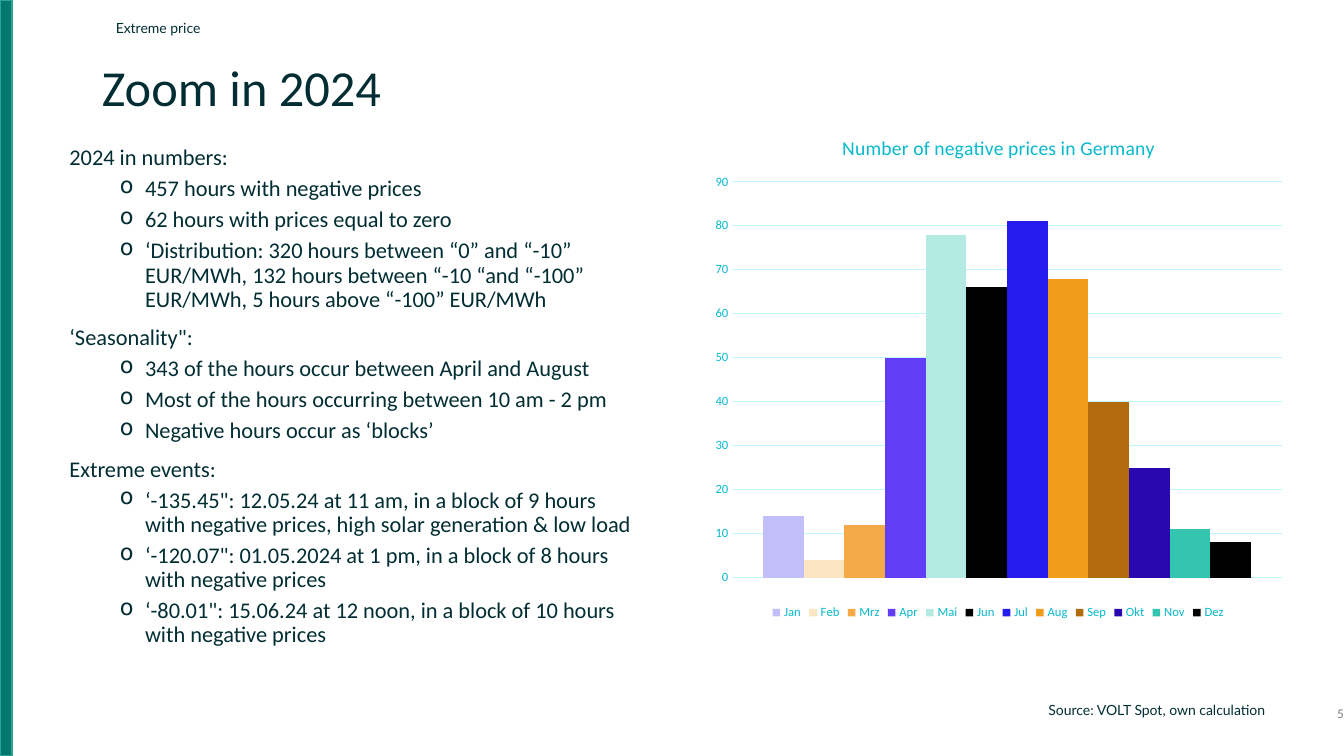
from lxml import etree
from pptx import Presentation
from pptx.chart.data import CategoryChartData
from pptx.dml.color import RGBColor
from pptx.enum.chart import XL_CHART_TYPE, XL_LEGEND_POSITION, XL_TICK_MARK
from pptx.enum.shapes import MSO_SHAPE
from pptx.enum.text import MSO_ANCHOR, MSO_AUTO_SIZE, PP_ALIGN
from pptx.oxml import parse_xml
from pptx.oxml.ns import nsdecls, qn
from pptx.util import Inches, Pt

COLUMNS = XL_CHART_TYPE.COLUMN_CLUSTERED
LEGEND_BOTTOM = XL_LEGEND_POSITION.BOTTOM
NO_TICK = XL_TICK_MARK.NONE
RECTANGLE = MSO_SHAPE.RECTANGLE
TOP, BOTTOM = MSO_ANCHOR.TOP, MSO_ANCHOR.BOTTOM
LEFT, RIGHT = PP_ALIGN.LEFT, PP_ALIGN.RIGHT

INK = RGBColor(0x02, 0x2E, 0x33)
GREY = RGBColor(0x80, 0x80, 0x80)
GREEN = RGBColor(0x01, 0x79, 0x6F)
GREEN_EDGE = RGBColor(0x2B, 0xA4, 0x93)
CYAN = RGBColor(0x08, 0xB9, 0xCD)
GRID = RGBColor(0xBD, 0xF6, 0xFC)

MONTHS = [
    ("Jan", 14, RGBColor(0xC1, 0xBE, 0xFA)),
    ("Feb", 4, RGBColor(0xFB, 0xE5, 0xC3)),
    ("Mrz", 12, RGBColor(0xF3, 0xAA, 0x47)),
    ("Apr", 50, RGBColor(0x61, 0x3E, 0xF5)),
    ("Mai", 78, RGBColor(0xB3, 0xEB, 0xE3)),
    ("Jun", 66, RGBColor(0x00, 0x00, 0x00)),
    ("Jul", 81, RGBColor(0x25, 0x1B, 0xED)),
    ("Aug", 68, RGBColor(0xF0, 0x9D, 0x1C)),
    ("Sep", 40, RGBColor(0xB1, 0x6B, 0x0C)),
    ("Okt", 25, RGBColor(0x29, 0x09, 0xAF)),
    ("Nov", 11, RGBColor(0x34, 0xC5, 0xB0)),
    ("Dez", 8, RGBColor(0x00, 0x00, 0x00)),
]

SECTIONS = [
    ("2024 in numbers:", [
        "457 hours with negative prices",
        "62 hours with prices equal to zero",
        "‘Distribution: 320 hours between “0” and “-10” EUR/MWh, 132 hours "
        "between “-10 “and “-100” EUR/MWh, 5 hours above “-100” EUR/MWh",
    ]),
    ("‘Seasonality\":", [
        "343 of the hours occur between April and August",
        "Most of the hours occurring between 10 am - 2 pm",
        "Negative hours occur as ‘blocks’",
    ]),
    ("Extreme events:", [
        "‘-135.45\": 12.05.24 at 11 am, in a block of 9 hours with negative "
        "prices, high solar generation & low load",
        "‘-120.07\": 01.05.2024 at 1 pm, in a block of 8 hours with negative prices",
        "‘-80.01\": 15.06.24 at 12 noon, in a block of 10 hours with negative prices",
    ]),
]


def apply(target, **values):
    for name, value in values.items():
        setattr(target, name, value)


class SlideBuilder:
    font_name = "Calibri"

    def __init__(self, page):
        self.page = page

    def style_font(self, font, size, color=INK, name=None):
        apply(font, size=Pt(size), name=name or self.font_name, bold=False)
        font.color.rgb = color

    def frame(self, box, anchor=TOP, **margins):
        apply(box.text_frame, word_wrap=True, auto_size=MSO_AUTO_SIZE.NONE,
              vertical_anchor=anchor, **margins)
        return box.text_frame

    def fill_para(self, para, text, size, color=INK, name=None, **layout):
        apply(para, **layout)
        self.style_font(para.font, size, color, name)
        span = para.add_run()
        span.text = text
        self.style_font(span.font, size, color, name)

    def title(self, text, area, size):
        box = self.page.shapes.title
        apply(box, **dict(zip(("left", "top", "width", "height"), map(Inches, area))))
        self.fill_para(self.frame(box).paragraphs[0], text, size,
                       alignment=LEFT, line_spacing=0.9)

    def text(self, text, area, size, color=INK, name=None, anchor=TOP,
             margins=None, **layout):
        box = self.page.shapes.add_textbox(*map(Inches, area))
        frame = self.frame(box, anchor, **(margins or {}))
        self.fill_para(frame.paragraphs[0], text, size, color, name, **layout)

    def outline(self, sections, area, size):
        box = self.page.shapes.add_textbox(*map(Inches, area))
        frame = self.frame(box)
        for index, (heading, points) in enumerate(sections):
            para = frame.add_paragraph() if index else frame.paragraphs[0]
            self.fill_para(para, heading, size, line_spacing=0.9,
                           space_before=Pt(10 if index else 0))
            for point in points:
                para = frame.add_paragraph()
                self.bullet(para)
                self.fill_para(para, point, size, level=1, line_spacing=0.9,
                               space_before=Pt(5))

    def bullet(self, para):
        properties = para._p.get_or_add_pPr()
        properties.set("marL", str(Inches(0.75)))
        properties.set("indent", str(Inches(-0.25)))
        etree.SubElement(properties, qn("a:buChar")).set("char", "o")

    def bar(self, area, fill, edge):
        shape = self.page.shapes.add_shape(RECTANGLE, *map(Inches, area))
        shape.shadow.inherit = False
        shape.fill.solid()
        shape.fill.fore_color.rgb = fill
        shape.line.color.rgb = edge
        shape.line.width = Pt(1)

    def column_chart(self, title, months, area):
        data = CategoryChartData()
        data.categories = ["1"]
        for month, hours, _ in months:
            data.add_series(month, [hours])
        chart = self.page.shapes.add_chart(COLUMNS, *map(Inches, area), data).chart
        self.style_font(chart.font, 10)

        # Title and legend
        chart.has_title = True
        self.fill_para(chart.chart_title.text_frame.paragraphs[0], title, 14, CYAN)
        chart.has_legend = True
        apply(chart.legend, position=LEGEND_BOTTOM, include_in_layout=False)
        self.style_font(chart.legend.font, 9, CYAN)

        # Axes
        chart.category_axis.visible = False
        axis = chart.value_axis
        apply(axis, minimum_scale=0, maximum_scale=90, major_unit=10,
              major_tick_mark=NO_TICK, minor_tick_mark=NO_TICK,
              has_major_gridlines=True)
        axis.format.line.fill.background()
        axis.major_gridlines.format.line.color.rgb = GRID
        axis.major_gridlines.format.line.width = Pt(0.75)
        self.style_font(axis.tick_labels.font, 9, CYAN)

        # Columns
        plot = chart.plots[0]
        apply(plot, gap_width=150, overlap=0, vary_by_categories=False)
        for series, (_, _, color) in zip(plot.series, months):
            series.format.fill.solid()
            series.format.fill.fore_color.rgb = color

        # Fixed places inside the chart
        self.place(chart.chart_title._element, {"x": 0.23, "y": 0.04})
        self.place(chart._chartSpace.chart.plotArea,
                   {"x": 0.05, "y": 0.14, "w": 0.93, "h": 0.77}, inner=True)

    def place(self, part, fractions, inner=False):
        for old in part.findall(qn("c:layout")):
            part.remove(old)
        layout = parse_xml(f"<c:layout {nsdecls('c')}><c:manualLayout/></c:layout>")
        manual = layout[0]
        values = {"layoutTarget": "inner"} if inner else {}
        values.update(xMode="edge", yMode="edge", **fractions)
        for name, value in values.items():
            etree.SubElement(manual, qn(f"c:{name}")).set("val", str(value))
        text = part.find(qn("c:tx"))
        part.insert(0 if text is None else 1, layout)


def main():
    deck = Presentation()
    deck.slide_width, deck.slide_height = Inches(13.33), Inches(7.5)
    builder = SlideBuilder(deck.slides.add_slide(deck.slide_layouts[5]))

    # Side bar and headings
    builder.bar((0, 0, 0.12, 7.5), GREEN, GREEN_EDGE)
    builder.text("Extreme price", (1.05, 0.19, 6.74, 0.22), 10, name="Lato",
                 anchor=BOTTOM, line_spacing=0.9)
    builder.title("Zoom in 2024", (0.91, 0.57, 11.76, 0.88), 36)

    # Findings and chart
    builder.outline(SECTIONS, (0.59, 1.4, 5.78, 4.48), 16)
    builder.column_chart("Number of negative prices in Germany", MONTHS,
                         (6.97, 1.09, 5.86, 5.1))

    # Footer
    builder.text("Source: VOLT Spot, own calculation", (10.3, 6.86, 2.52, 0.32), 10,
                 name="Lato", anchor=BOTTOM, line_spacing=Pt(38))
    builder.text("5", (12.67, 6.95, 0.66, 0.4), 9.5, GREY,
                 margins={"margin_right": 0}, alignment=RIGHT)

    deck.save("out.pptx")


if __name__ == "__main__":
    main()
